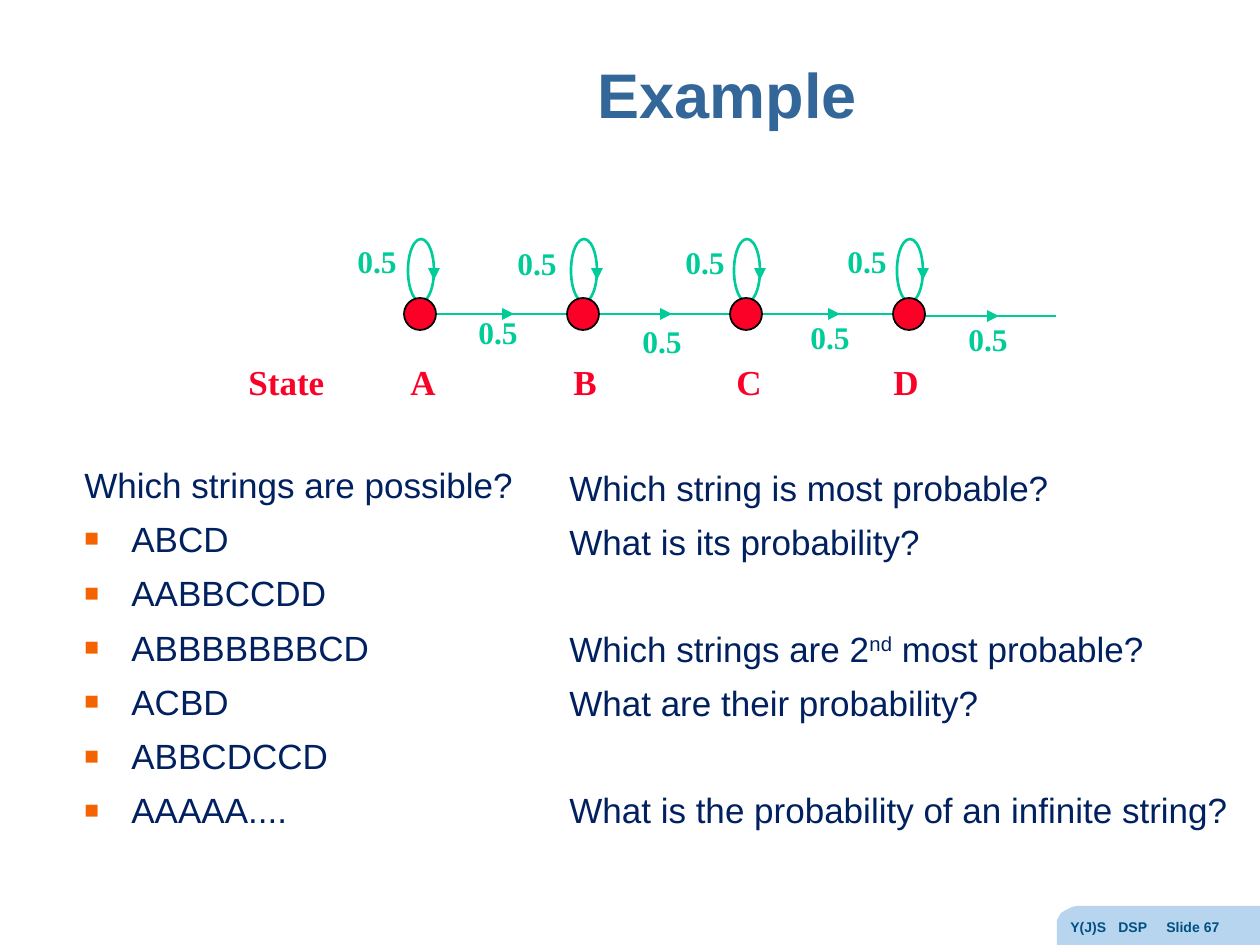
from dataclasses import dataclass
from lxml import etree
from pptx import Presentation
from pptx.dml.color import RGBColor
from pptx.enum.shapes import MSO_CONNECTOR, MSO_SHAPE
from pptx.enum.text import MSO_ANCHOR, PP_ALIGN
from pptx.oxml.ns import qn
from pptx.util import Emu, Pt

LINE = MSO_CONNECTOR.STRAIGHT
OVAL = MSO_SHAPE.OVAL
CENTER = PP_ALIGN.CENTER
MIDDLE = MSO_ANCHOR.MIDDLE
SCALE = 914400 / 126


@dataclass(frozen=True)
class Style:
    face: str
    size: int
    color: str
    bold: bool = False


@dataclass(frozen=True)
class Theme:
    title = Style("Arial", 36, "336699", True)
    body = Style("Arial", 20, "002060")
    foot = Style("Arial", 8, "005081", True)
    state = Style("Times New Roman", 20, "FC0128", True)
    odds = Style("Times New Roman", 18, "00CC99", True)
    node: str = "FC0128"
    edge: str = "00CC99"
    rim: str = "000000"
    tab: str = "B7D5EF"
    mark: str = "F46300"
    thin: float = 1.5
    thick: float = 2.25
    gap: int = 7
    skip: int = 37


@dataclass(frozen=True)
class State:
    left: int
    loop: tuple[int, int]
    link: tuple[int, int]
    tip: int
    level: int = 314


@dataclass(frozen=True)
class Row:
    text: str
    gap: int = Theme.gap
    mark: bool = False
    sup: str = ""
    rest: str = ""


THEME = Theme()
FIRST, STEP, SIZE = 404, 163, 32
STATES = [
    State(FIRST, (345, 236), (466, 307), 514),
    State(FIRST + STEP, (505, 238), (630, 316), 672),
    State(FIRST + 2 * STEP, (673, 237), (798, 312), 840),
    State(FIRST + 3 * STEP, (835, 236), (956, 314), 999, 316),
]
WORDS = ["ABCD", "AABBCCDD", "ABBBBBBBCD", "ACBD", "ABBCDCCD", "AAAAA...."]
LEFT = [Row("Which strings are possible?")] + [Row(w, mark=True) for w in WORDS]
RIGHT = [
    Row("Which string is most probable?"),
    Row("What is its probability?"),
    Row("Which strings are 2", THEME.skip, sup="nd", rest=" most probable?"),
    Row("What are their probability?"),
    Row("What is the probability of an infinite string?", THEME.skip),
]
CORNER = [(1260, 906), (1260, 945), (1057, 945), (1057, 925), (1057, 920),
          (1061, 913), (1066, 910), (1072, 907), (1077, 906)]


def px(n: int) -> Emu:
    return Emu(round(n * SCALE))


def rgb(color: str) -> RGBColor:
    return RGBColor.from_string(color)


def add_xml(parent, tag: str, **attrs: str):
    return etree.SubElement(parent, qn(tag), attrs)


def set_font(para, style: Style) -> None:
    font = para.font
    font.name, font.size, font.bold = style.face, Pt(style.size), style.bold
    font.color.rgb = rgb(style.color)


def add_frame(slide, left: int, top: int, width: int, height: int):
    frame = slide.shapes.add_textbox(px(left), px(top), px(width), px(height)).text_frame
    frame.word_wrap = True
    return frame


def add_label(slide, text: str, box: tuple[int, int, int, int], style: Style,
              stops: tuple[int, ...] = ()):
    frame = add_frame(slide, *box)
    para = frame.paragraphs[0]
    para.add_run().text = text
    if stops:
        tabs = add_xml(para._p.get_or_add_pPr(), "a:tabLst")
        for stop in stops:
            add_xml(tabs, "a:tab", pos=str(px(stop)), algn="l")
    set_font(para, style)
    return frame


def add_mark(para) -> None:
    props = para._p.get_or_add_pPr()
    props.set("marL", str(px(47)))
    props.set("indent", str(px(-47)))
    add_xml(add_xml(props, "a:buClr"), "a:srgbClr", val=THEME.mark)
    add_xml(props, "a:buSzPct", val="70000")
    add_xml(props, "a:buFont", typeface="Arial")
    add_xml(props, "a:buChar", char="■")


def add_rows(slide, rows: list[Row], box: tuple[int, int, int, int]) -> None:
    frame = add_frame(slide, *box)
    for i, row in enumerate(rows):
        para = frame.add_paragraph() if i else frame.paragraphs[0]
        para.add_run().text = row.text
        if row.sup:
            sup = para.add_run()
            sup.text = row.sup
            sup._r.get_or_add_rPr().set("baseline", "30000")
            para.add_run().text = row.rest
        if row.mark:
            add_mark(para)
        if i:
            para.space_before = Pt(row.gap)
        set_font(para, THEME.body)


def add_line(slide, start: tuple[int, int], end: tuple[int, int], tip: bool = False) -> None:
    line = slide.shapes.add_connector(LINE, *map(px, start + end))
    line.line.color.rgb = rgb(THEME.edge)
    line.line.width = Pt(THEME.thick if tip else THEME.thin)
    props = line._element.spPr
    if tip:
        add_xml(props.find(qn("a:ln")), "a:tailEnd", type="triangle")
    add_xml(props, "a:effectLst")


def add_oval(slide, box: tuple[int, int, int, int], color: str, width: float,
             fill: str = "") -> None:
    oval = slide.shapes.add_shape(OVAL, *map(px, box))
    oval.shadow.inherit = False
    if fill:
        oval.fill.solid()
        oval.fill.fore_color.rgb = rgb(fill)
    else:
        oval.fill.background()
    oval.line.color.rgb = rgb(color)
    oval.line.width = Pt(width)


def add_state(slide, state: State) -> None:
    left, level, tip = state.left, state.level, state.tip
    add_oval(slide, (left + 4, 239, 26, 63), THEME.edge, THEME.thin)
    add_line(slide, (left + 30, 270), (left + 30, 280), True)
    add_line(slide, (left + SIZE, level), (left + STEP, level))
    add_line(slide, (tip - 10, level), (tip, level), True)
    add_oval(slide, (left, 298, SIZE, SIZE), THEME.rim, 1, THEME.node)
    for spot in (state.loop, state.link):
        add_label(slide, "0.5", spot + (73, 50), THEME.odds)


def add_corner(slide) -> None:
    pen = slide.shapes.build_freeform(*CORNER[0], scale=SCALE)
    pen.add_line_segments(CORNER[1:], close=True)
    shape = pen.convert_to_shape()
    shape.shadow.inherit = False
    shape.fill.solid()
    shape.fill.fore_color.rgb = rgb(THEME.tab)
    shape.line.fill.background()
    add_label(slide, "Y(J)S\tDSP\tSlide 67", (1058, 912, 202, 33), THEME.foot, (48, 96))


def main() -> None:
    deck = Presentation()
    deck.slide_width, deck.slide_height = px(1260), px(945)
    slide = deck.slides.add_slide(deck.slide_layouts[6])
    add_corner(slide)
    title = add_label(slide, "Example", (267, 19, 921, 158), THEME.title)
    title.vertical_anchor = MIDDLE
    title.paragraphs[0].alignment = CENTER
    title.paragraphs[0].line_spacing = 0.9
    add_label(slide, "State\tA\tB\tC\tD", (236, 354, 789, 55), THEME.state,
              (162, 325, 488, 645))
    for state in STATES:
        add_state(slide, state)
    add_rows(slide, LEFT, (72, 457, 573, 363))
    add_rows(slide, RIGHT, (557, 460, 693, 363))
    deck.save("out.pptx")


if __name__ == "__main__":
    main()
